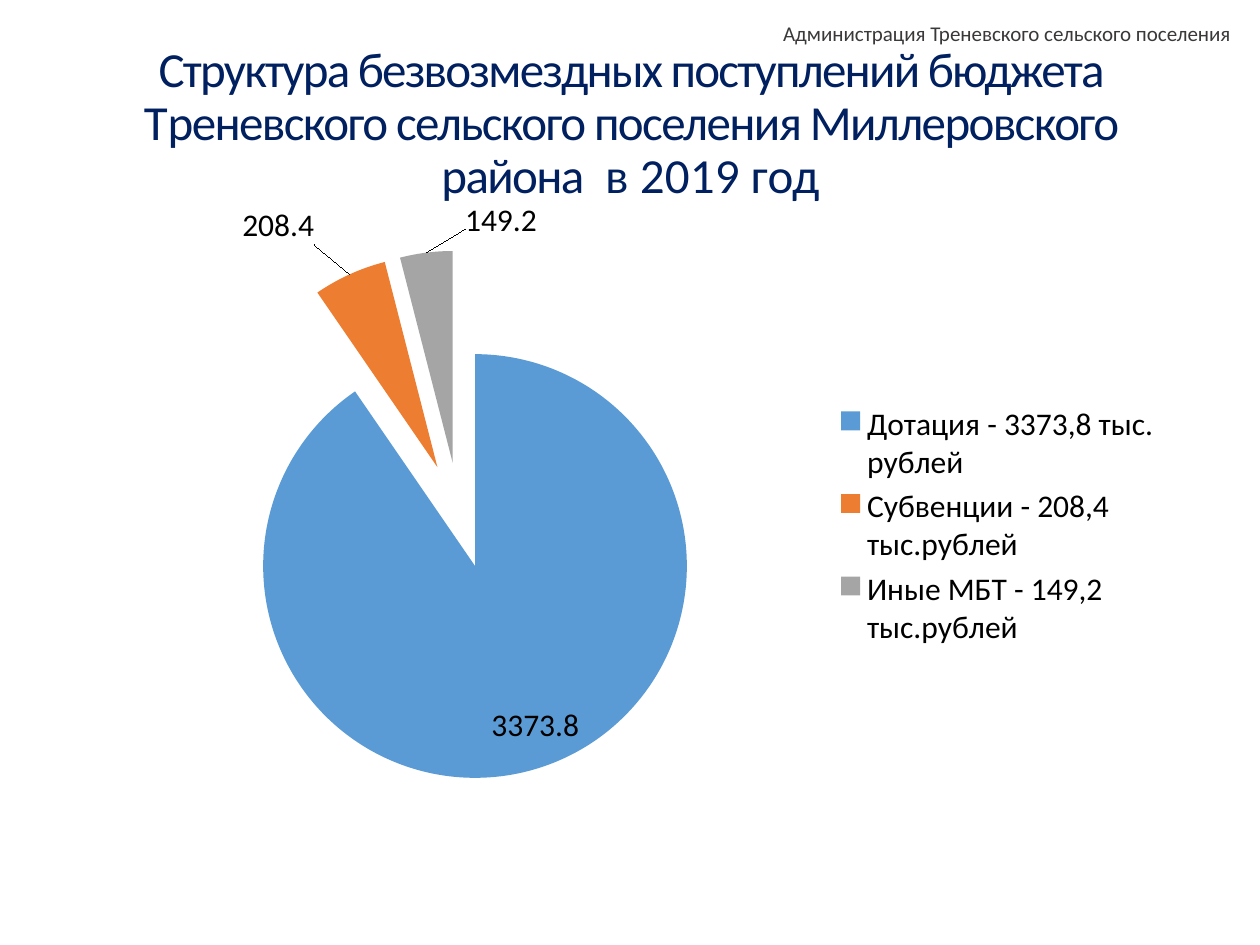
import pptx
import pptx.chart.data
import pptx.dml.color
import pptx.enum.chart
import pptx.enum.text
import pptx.oxml
import pptx.oxml.ns
import pptx.util

WIDTH, HEIGHT = 10, 7.5
THEME = {
    "font": "Calibri",
    "title": ("002060", 28),
    "header": ("3B3838", 12),
    "chart": ("000000", 18),
    "slices": ["5B9BD5", "ED7D31", "A5A5A5"],
}

HEADER = [("Администрация Треневского сельского поселения", 0)]
# Each run: text, letter spacing in hundredths of a point
TITLE = [
    ("Структура безвозмездных поступлений бюджета Т", -100),
    ("реневского сельского поселения Миллеровского района ", -90),
    (" в 2019 год", 10),
]
REVENUES = [
    ("Дотация - 3373,8 тыс. рублей", 3373.8),
    ("Субвенции - 208,4 тыс.рублей", 208.4),
    ("Иные МБТ - 149,2 тыс.рублей", 149.2),
]
EXPLOSION = 25
# Shares of the chart's size
PLOT = {"x": 0.059, "y": 0.076, "w": 0.564, "h": 0.816}
LABEL_SHIFTS = {1: {"x": -0.03, "y": -0.035}, 2: {"x": 0.103, "y": -0.025}}

# Left, top, width, height as shares of the slide
TITLE_AREA = (0.072, 0.06, 0.857, 0.143)
CHART_AREA = (0.071, 0.213, 0.861, 0.687)
HEADER_AREA = (0.354, 0.019, 0.633, 0.032)


def place(area):
    return [pptx.util.Inches(share * side)
            for share, side in zip(area, (WIDTH, HEIGHT, WIDTH, HEIGHT))]


def style(font, role):
    color, size = THEME[role]
    font.name = THEME["font"]
    font.size = pptx.util.Pt(size)
    font.color.rgb = pptx.dml.color.RGBColor.from_string(color)


def add_text(slide, area, runs, role, align, line_spacing=1.0):
    frame = slide.shapes.add_textbox(*place(area)).text_frame
    frame.word_wrap = True
    frame.vertical_anchor = pptx.enum.text.MSO_ANCHOR.MIDDLE
    paragraph = frame.paragraphs[0]
    paragraph.alignment = align
    paragraph.line_spacing = line_spacing
    style(paragraph.font, role)
    for words, spacing in runs:
        run = paragraph.add_run()
        run.text = words
        if spacing:
            run.font._element.set("spc", str(spacing))


def manual_layout(values, inner=False):
    target = '<c:layoutTarget val="inner"/>' if inner else ""
    modes = "".join(f'<c:{key}Mode val="edge"/>' for key in "xy") if inner else ""
    sizes = "".join(f'<c:{key} val="{value}"/>' for key, value in values.items())
    return pptx.oxml.parse_xml(
        f'<c:layout {pptx.oxml.ns.nsdecls("c")}><c:manualLayout>'
        f'{target}{modes}{sizes}</c:manualLayout></c:layout>')


def add_revenue_pie(slide):
    data = pptx.chart.data.CategoryChartData()
    data.categories = [name for name, _ in REVENUES]
    data.add_series("Series 1", [value for _, value in REVENUES])
    chart = slide.shapes.add_chart(
        pptx.enum.chart.XL_CHART_TYPE.PIE, *place(CHART_AREA), data).chart
    style(chart.font, "chart")
    chart.has_title = False
    chart.has_legend = True
    chart.legend.position = pptx.enum.chart.XL_LEGEND_POSITION.RIGHT
    chart.legend.include_in_layout = False

    plot_area = chart._chartSpace.chart.plotArea
    for layout in plot_area.findall(pptx.oxml.ns.qn("c:layout")):
        plot_area.remove(layout)
    plot_area.insert(0, manual_layout(PLOT, inner=True))

    plot = chart.plots[0]
    plot.vary_by_categories = True
    pie = plot.series[0]
    for index, color in enumerate(THEME["slices"]):
        fill = pie.points[index].format.fill
        fill.solid()
        fill.fore_color.rgb = pptx.dml.color.RGBColor.from_string(color)
    pie._element.find(pptx.oxml.ns.qn("c:dPt")).addprevious(pptx.oxml.parse_xml(
        f'<c:explosion {pptx.oxml.ns.nsdecls("c")} val="{EXPLOSION}"/>'))

    best_fit = pptx.enum.chart.XL_LABEL_POSITION.BEST_FIT
    pie.data_labels.show_value = True
    pie.data_labels.position = best_fit
    for index, shift in LABEL_SHIFTS.items():
        label = pie.points[index].data_label
        label.position = best_fit
        entry = pie.data_labels._element.get_dLbl_for_point(index)
        entry.insert(1, manual_layout(shift))


def main():
    deck = pptx.Presentation()
    deck.slide_width = pptx.util.Inches(WIDTH)
    deck.slide_height = pptx.util.Inches(HEIGHT)
    slide = deck.slides.add_slide(deck.slide_layouts[6])
    align = pptx.enum.text.PP_ALIGN
    add_text(slide, TITLE_AREA, TITLE, "title", align.CENTER, 0.9)
    add_revenue_pie(slide)
    add_text(slide, HEADER_AREA, HEADER, "header", align.RIGHT)
    deck.save("out.pptx")


if __name__ == "__main__":
    main()
